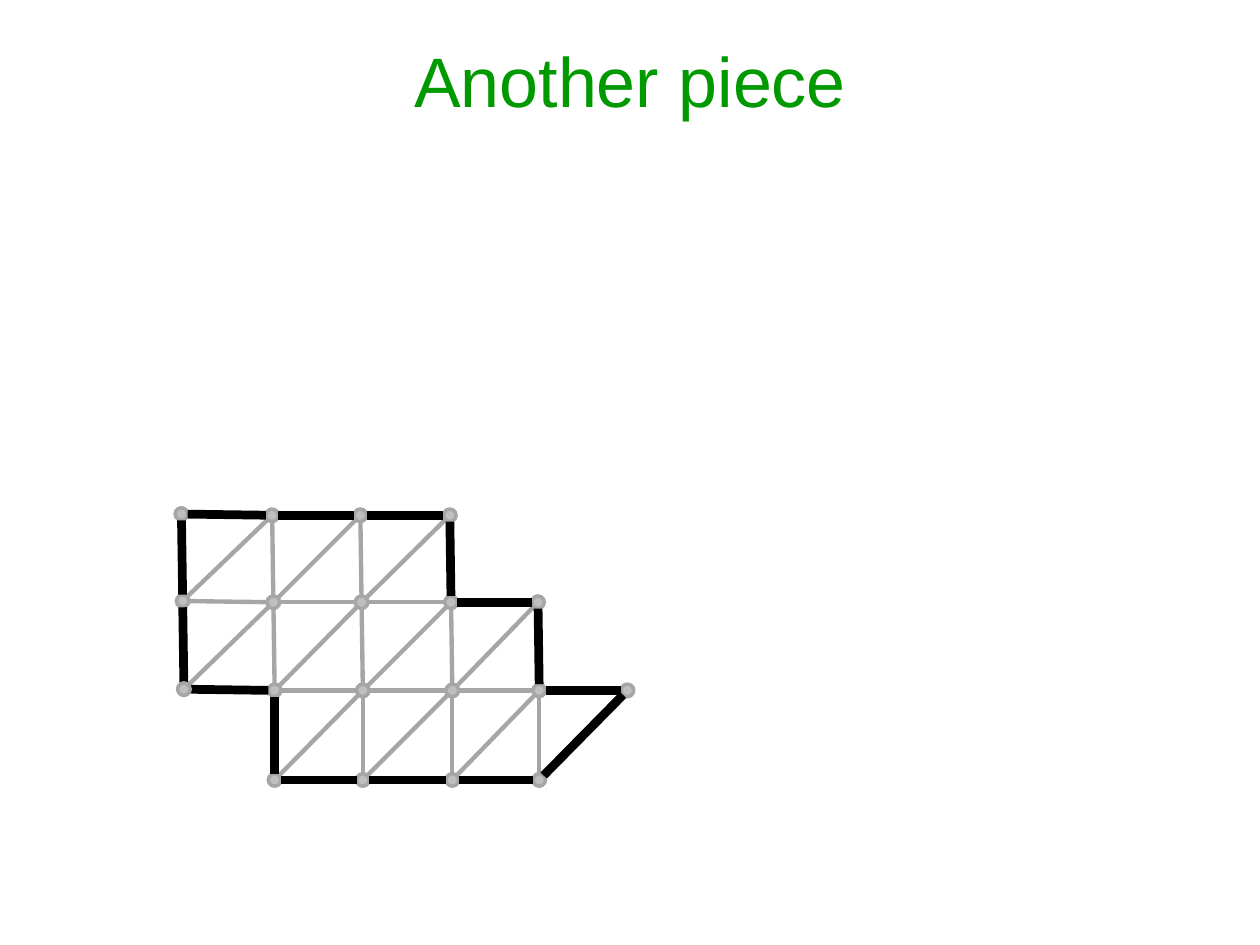
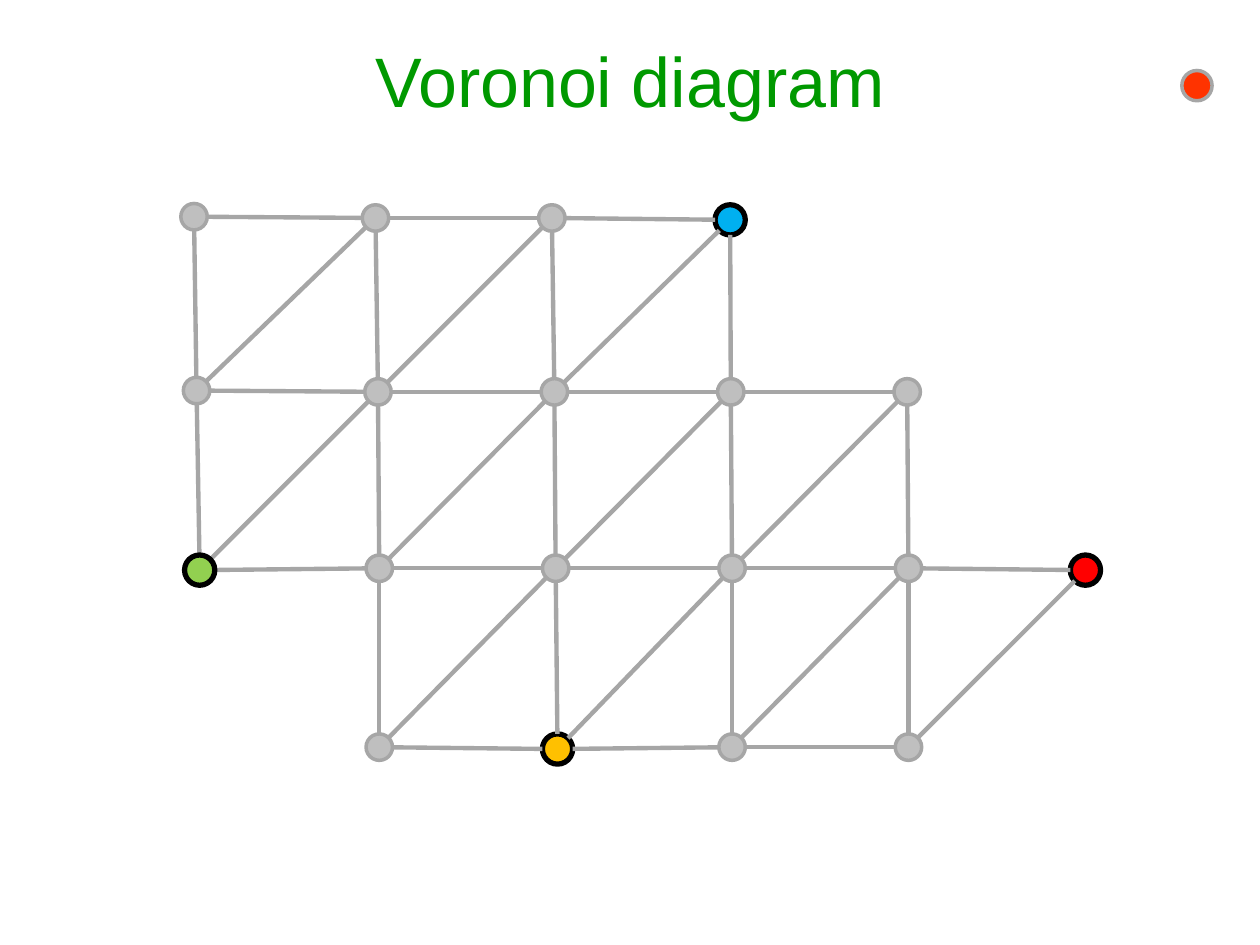
from math import hypot

from pptx import Presentation
from pptx.dml.color import RGBColor
from pptx.enum.shapes import MSO_CONNECTOR, MSO_SHAPE
from pptx.enum.text import MSO_ANCHOR, PP_ALIGN
from pptx.oxml.ns import qn
from pptx.util import Inches, Pt
from lxml.etree import SubElement

COLORS = {
    "title": "009900", "node": "BFBFBF", "edge": "A6A6A6", "black": "000000",
    "blue": "00B0F0", "red": "FF0000", "gold": "FFC000", "green": "92D050",
    "orange": "FF3300",
}
FONT = "Arial"

# First and last column of each mesh row
SPANS = [(0, 3), (0, 4), (0, 5), (1, 4)]
NODES = [(col, row) for row, (first, last) in enumerate(SPANS)
         for col in range(first, last + 1)]
STEPS = [(1, 0), (0, 1), (1, -1)]
EDGES = [((col, row), (col + dx, row + dy)) for col, row in NODES
         for dx, dy in STEPS if (col + dx, row + dy) in NODES]
CORNER = (0, 2)  # drawn above the edges


def near(node):
    """Nodes that share an edge with this one."""
    return {b if a == node else a for a, b in EDGES if node in (a, b)}


def is_rim(a, b):
    """An edge on the rim belongs to one triangle only."""
    return len(near(a) & near(b)) < 2


def color(name):
    return RGBColor.from_string(COLORS[name])


def write(frame, text, size=40, ink="title", align=PP_ALIGN.CENTER):
    frame.word_wrap = True
    frame.vertical_anchor = MSO_ANCHOR.MIDDLE
    par = frame.paragraphs[0]
    par.alignment = align
    run = par.add_run()
    run.text = text
    run.font.name = FONT
    run.font.size = Pt(size)
    run.font.color.rgb = color(ink)


class Deck:
    def __init__(self):
        self.prs = Presentation()
        self.prs.slide_width = Inches(10)
        self.prs.slide_height = Inches(7.5)
        self.slide = None

    def page(self, title):
        self.slide = self.prs.slides.add_slide(self.prs.slide_layouts[6])
        box = self.slide.shapes.add_textbox(
            Inches(0.75), Inches(0.01), Inches(8.5), Inches(1.25))
        write(box.text_frame, title)

    def dot(self, x, y, size, fill="node", line="edge", width=2):
        dot = self.slide.shapes.add_shape(
            MSO_SHAPE.OVAL, Inches(x - size / 2), Inches(y - size / 2),
            Inches(size), Inches(size))
        dot.shadow.inherit = False
        dot.fill.solid()
        dot.fill.fore_color.rgb = color(fill)
        dot.line.color.rgb = color(line)
        dot.line.width = Pt(width)

    def edge(self, start, end, ink="edge", width=2.5):
        """Join the rims of two dots, each given as (x, y, size)."""
        (x1, y1, d1), (x2, y2, d2) = start, end
        span = hypot(x2 - x1, y2 - y1)
        ux, uy = (x2 - x1) / span, (y2 - y1) / span
        line = self.slide.shapes.add_connector(
            MSO_CONNECTOR.STRAIGHT,
            Inches(x1 + ux * d1 / 2), Inches(y1 + uy * d1 / 2),
            Inches(x2 - ux * d2 / 2), Inches(y2 - uy * d2 / 2))
        line.line.color.rgb = color(ink)
        line.line.width = Pt(width)
        SubElement(line._element.spPr, qn("a:effectLst"))

    def mesh(self, cols, rows, shifts, size, sites=None, outline=False):
        sites = sites or {}
        spots = {}
        for col, row in NODES:
            grow = 0.03 if (col, row) in sites else 0
            lift = 0.01 if col == 0 and not grow else 0
            spots[col, row] = (cols[col] + shifts[row] + grow / 2,
                               rows[row] - lift + grow / 2, size + grow)

        def mark(node):
            if node in sites:
                self.dot(*spots[node], fill=sites[node], line="black", width=3)
            else:
                self.dot(*spots[node])

        for node in NODES:
            if node != CORNER:
                mark(node)
        # Rim edges go above inner ones
        for a, b in sorted(EDGES, key=lambda pair: is_rim(*pair)):
            if outline and is_rim(a, b):
                self.edge(spots[a], spots[b], ink="black", width=5)
            else:
                self.edge(spots[a], spots[b])
        mark(CORNER)


def main():
    deck = Deck()

    # Small mesh with a bold rim
    deck.page("Another piece")
    deck.mesh(cols=[1.44, 2.16, 2.86, 3.57, 4.26, 4.96],
              rows=[4.09, 4.78, 5.48, 6.19],
              shifts=[0, 0.01, 0.02, 0.02], size=0.1, outline=True)

    # Large mesh with four sites
    deck.page("Voronoi diagram")
    deck.mesh(cols=[1.54, 2.98, 4.38, 5.78, 7.18, 8.57],
              rows=[1.73, 3.11, 4.51, 5.93],
              shifts=[0, 0.02, 0.03, 0.03], size=0.21,
              sites={(3, 0): "blue", (5, 2): "red",
                     (2, 3): "gold", CORNER: "green"})
    deck.dot(9.5, 0.68, 0.24, fill="orange")

    deck.prs.save("out.pptx")


if __name__ == "__main__":
    main()
